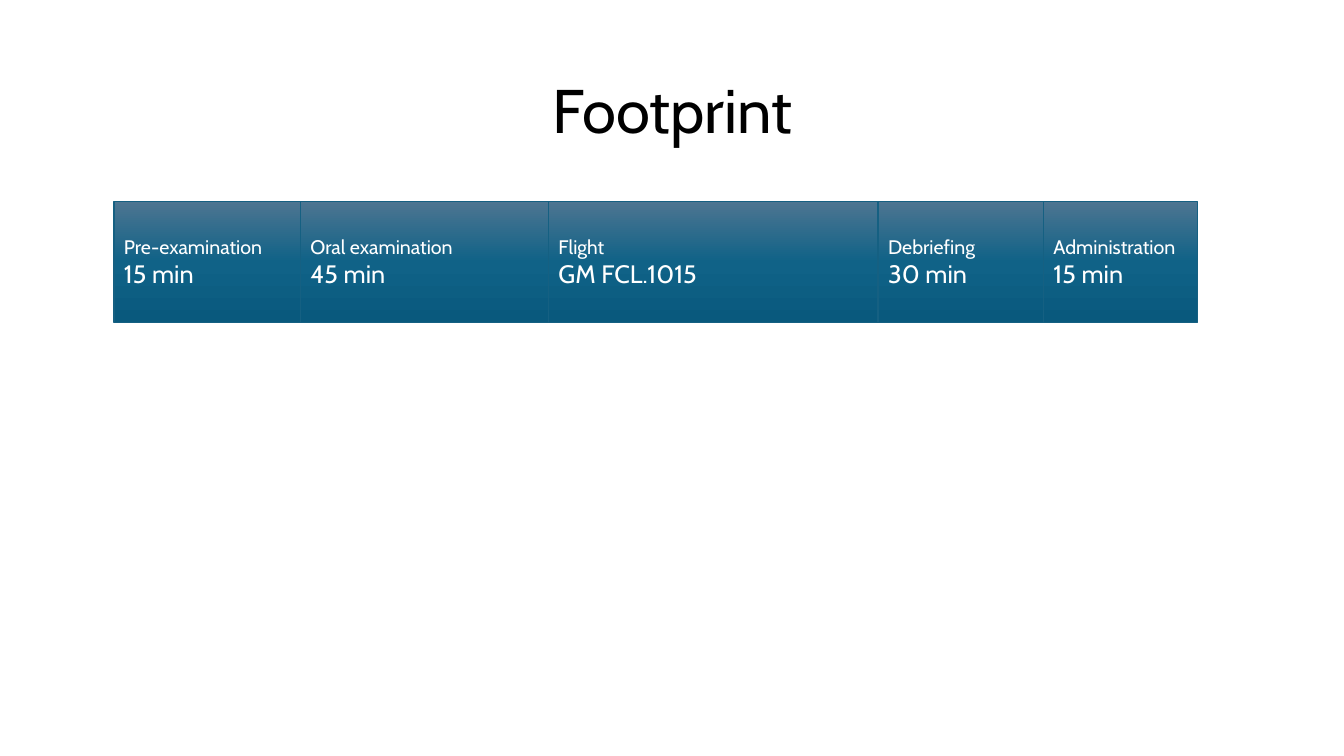
from copy import deepcopy
from itertools import accumulate

from pptx import Presentation
from pptx.dml.color import RGBColor
from pptx.enum.shapes import MSO_SHAPE
from pptx.enum.text import MSO_ANCHOR, MSO_AUTO_SIZE, PP_ALIGN
from pptx.oxml.ns import qn
from pptx.util import Inches, Pt

FONT = "Cabin"
GRADIENT = [(0, "4C7591"), (0.5, "106287"), (1, "09597D")]
PHASES = [
    ("Pre-examination", "15 min", 1.85),
    ("Oral examination", "45 min", 2.46),
    ("Flight", "GM FCL.1015", 3.27),
    ("Debriefing", "30 min", 1.64),
    ("Administration", "15 min", 1.53),
]


def color(value):
    return RGBColor.from_string(value)


def write(para, text, size, shade, align=PP_ALIGN.LEFT, spacing=1.0):
    para.alignment = align
    para.line_spacing = spacing
    span = para.add_run()
    span.text = text
    span.font.name = FONT
    span.font.size = Pt(size)
    span.font.color.rgb = color(shade)


def fill_gradient(box):
    box.fill.gradient()
    box.fill.gradient_angle = 270
    stop_list = box._element.spPr.find(".//" + qn("a:gsLst"))
    stop_list.insert(1, deepcopy(stop_list[0]))
    for stop, (position, shade) in zip(box.fill.gradient_stops, GRADIENT):
        stop.position = position
        stop.color.rgb = color(shade)


def place_title(page, text, left, top, width, height):
    title = page.shapes.title
    title.left, title.top = Inches(left), Inches(top)
    title.width, title.height = Inches(width), Inches(height)
    frame = title.text_frame
    frame.auto_size = MSO_AUTO_SIZE.NONE
    frame.vertical_anchor = MSO_ANCHOR.MIDDLE
    write(frame.paragraphs[0], text, 44, "000000", PP_ALIGN.CENTER, 0.9)


def add_phase(page, name, duration, left, top, width, height):
    box = page.shapes.add_shape(
        MSO_SHAPE.RECTANGLE, Inches(left), Inches(top), Inches(width), Inches(height)
    )
    box.shadow.inherit = False
    fill_gradient(box)
    box.line.color.rgb = color("156082")
    box.line.width = Pt(1)
    frame = box.text_frame
    frame.word_wrap = True
    frame.vertical_anchor = MSO_ANCHOR.MIDDLE
    write(frame.paragraphs[0], name, 14, "FFFFFF")
    write(frame.add_paragraph(), duration, 18, "FFFFFF")


def add_timeline(page, phases, left, top, height):
    edges = accumulate((width for _, _, width in phases), initial=left)
    for (name, duration, width), edge in zip(phases, edges):
        add_phase(page, name, duration, edge, top, width, height)


def main():
    deck = Presentation()
    deck.slide_width, deck.slide_height = Inches(13.33), Inches(7.5)
    page = deck.slides.add_slide(deck.slide_layouts.get_by_name("Title Only"))
    place_title(page, "Footprint", 0.92, 0.4, 11.5, 1.45)
    add_timeline(page, PHASES, 1.13, 2, 1.2)
    deck.save("out.pptx")


if __name__ == "__main__":
    main()
